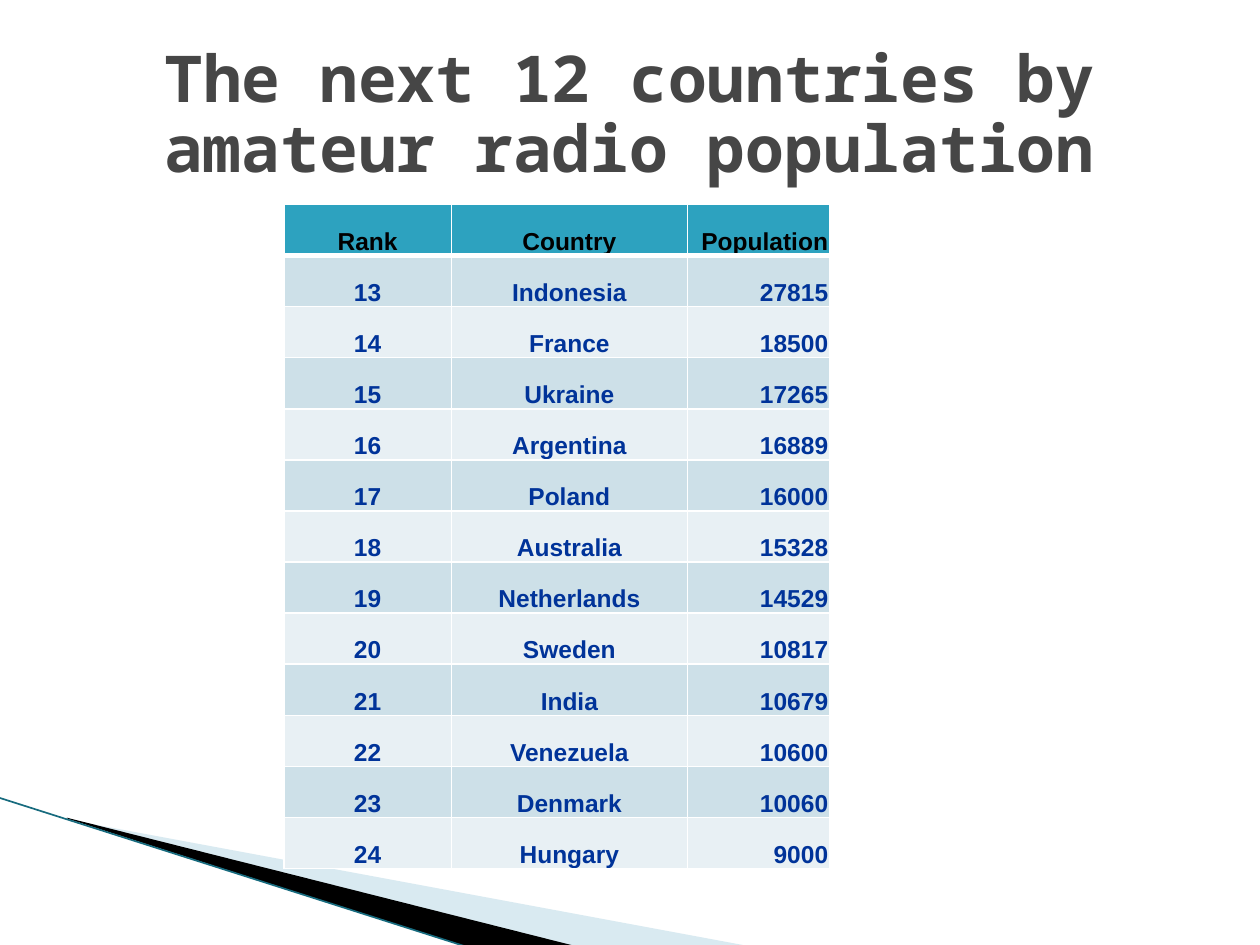
from lxml import etree
from pptx import Presentation
from pptx import util as u
from pptx.dml.color import RGBColor
from pptx.enum import shapes, text
from pptx.oxml import ns

COLORS = {
    "title": "464646", "header": "2DA2BF", "header_text": "000000",
    "odd_row": "CDE0E8", "even_row": "E8F0F4", "row_text": "003399",
    "border": "FFFFFF", "pale_wedge": "A0CBDC", "dark_wedge": "000000",
    "edge": "176B7E",
}
COUNTRIES = [
    ("Indonesia", 27815), ("France", 18500), ("Ukraine", 17265),
    ("Argentina", 16889), ("Poland", 16000), ("Australia", 15328),
    ("Netherlands", 14529), ("Sweden", 10817), ("India", 10679),
    ("Venezuela", 10600), ("Denmark", 10060), ("Hungary", 9000),
]


def color(name):
    return RGBColor.from_string(COLORS[name])


def format_text(paragraph, alignment, color_name, font_format):
    paragraph.alignment = alignment
    font = paragraph.runs[0].font
    for attribute, value in font_format.items():
        setattr(font, attribute, value)
    font.color.rgb = color(color_name)


presentation = Presentation()
presentation.slide_width, presentation.slide_height = u.Pt(720), u.Pt(540)
slide = presentation.slides.add_slide(presentation.slide_layouts[6])

# Corner wedges
wedges = [
    ("pale_wedge", 40, [(39.6, 468.5), (428.4, 540.7), (328.3, 540.7), (39.6, 468)]),
    ("dark_wedge", 100, [(38.2, 467.3), (329, 540.7), (267.8, 541.4), (38.9, 468)]),
]
for name, opacity, points in wedges:
    corners = [(u.Pt(x), u.Pt(y)) for x, y in points]
    builder = slide.shapes.build_freeform(*corners[0])
    builder.add_line_segments(corners[1:], close=True)
    shape = builder.convert_to_shape()
    shape.shadow.inherit = False
    shape.line.fill.background()
    shape.fill.solid()
    shape.fill.fore_color.rgb = color(name)
    if opacity < 100:
        rgb = shape.fill._xPr.find(".//" + ns.qn("a:srgbClr"))
        etree.SubElement(rgb, ns.qn("a:alpha"), val=str(opacity * 1000))

# Wedge edge
edge = slide.shapes.add_connector(
    shapes.MSO_CONNECTOR.STRAIGHT, u.Pt(-0.7), u.Pt(455.8), u.Pt(267.8), u.Pt(541.4))
edge.line.color.rgb = color("edge")
edge.line.width = u.Pt(0.95)
etree.SubElement(edge._element.spPr, ns.qn("a:effectLst"))

# Title
title = slide.shapes.add_textbox(u.Pt(36), u.Pt(21.6), u.Pt(648), u.Pt(90))
frame = title.text_frame
frame.word_wrap = True
frame.vertical_anchor = text.MSO_ANCHOR.MIDDLE
frame.text = "The next 12 countries by amateur radio population"
frame.paragraphs[0].line_spacing = 0.9
format_text(frame.paragraphs[0], text.PP_ALIGN.CENTER, "title",
            {"name": "Noto Sans Mono", "size": u.Pt(36.9), "bold": True})

# Ranking table
rows = [("Rank", "Country", "Population")]
rows += [(rank, *entry) for rank, entry in enumerate(COUNTRIES, 13)]
column_widths = [95.8, 134.8, 81.2]
row_height = 29.2
alignments = [text.PP_ALIGN.CENTER, text.PP_ALIGN.CENTER, text.PP_ALIGN.RIGHT]
cell_format = {
    "margin_left": u.Pt(0.7), "margin_right": u.Pt(0.7),
    "margin_top": u.Pt(0.7), "margin_bottom": u.Pt(0),
    "vertical_anchor": text.MSO_ANCHOR.BOTTOM,
}
table = slide.shapes.add_table(
    len(rows), len(column_widths), u.Pt(162.2), u.Pt(116.8),
    u.Pt(sum(column_widths)), u.Pt(row_height * len(rows))).table
for column, width in zip(table.columns, column_widths):
    column.width = u.Pt(width)

for row_index, row in enumerate(rows):
    table.rows[row_index].height = u.Pt(row_height)
    is_header = row_index == 0
    fill_name = "header" if is_header else "odd_row" if row_index % 2 else "even_row"
    for column_index, value in enumerate(row):
        cell = table.cell(row_index, column_index)
        for attribute, setting in cell_format.items():
            setattr(cell, attribute, setting)
        cell.text = str(value)
        format_text(cell.text_frame.paragraphs[0], alignments[column_index],
                    "header_text" if is_header else "row_text",
                    {"name": "Arial", "size": u.Pt(14), "bold": True})

        # Borders, with a heavier rule under the header
        properties = cell._tc.get_or_add_tcPr()
        for side in "LRTB":
            heavy = (row_index, side) in [(0, "B"), (1, "T")]
            line = etree.SubElement(properties, ns.qn("a:ln" + side),
                                    w=str(u.Pt(3 if heavy else 1)))
            line_fill = etree.SubElement(line, ns.qn("a:solidFill"))
            etree.SubElement(line_fill, ns.qn("a:srgbClr"), val=COLORS["border"])
        cell.fill.solid()
        cell.fill.fore_color.rgb = color(fill_name)

presentation.save("out.pptx")
